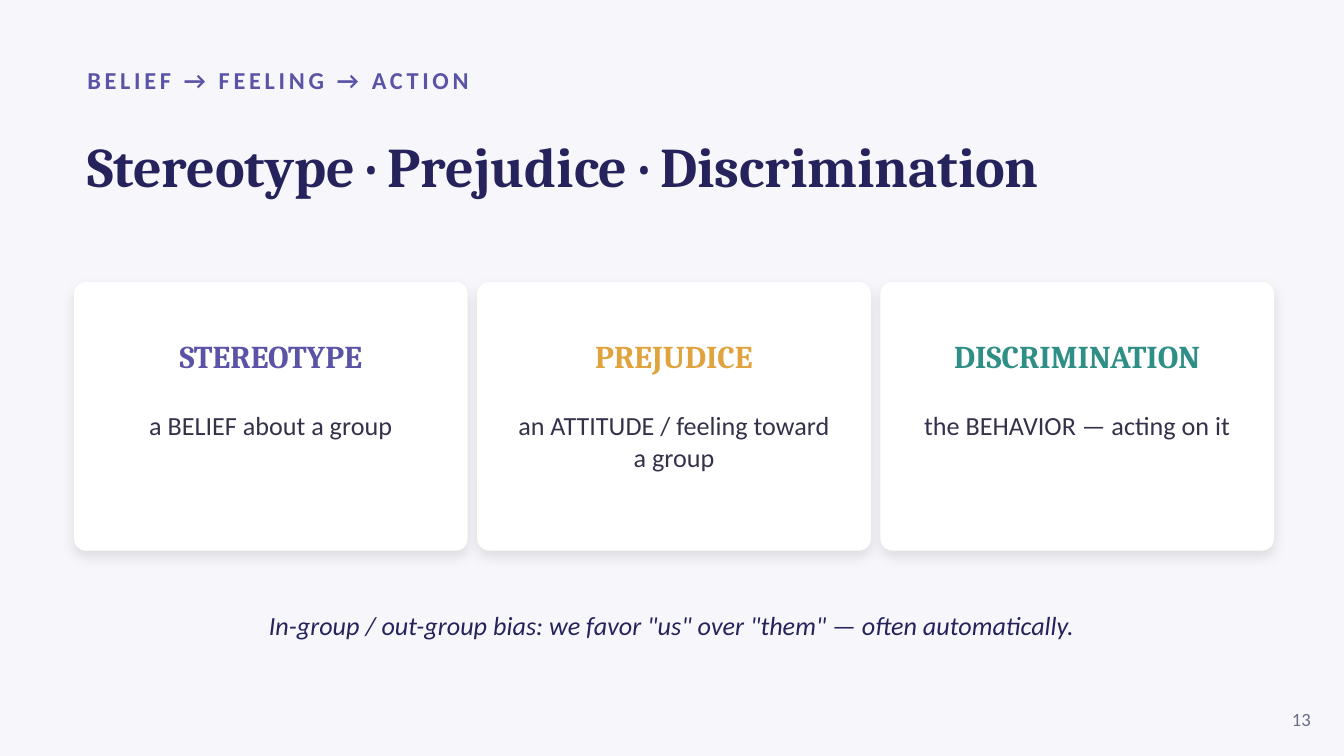
import pptx
import pptx.dml.color
import pptx.enum.shapes
import pptx.enum.text
import pptx.oxml
import pptx.oxml.ns
import pptx.util

Cm = pptx.util.Cm
RGBColor = pptx.dml.color.RGBColor
ALIGN = pptx.enum.text.PP_ALIGN
ANCHOR = pptx.enum.text.MSO_ANCHOR

BACKGROUND = RGBColor(0xF7, 0xF7, 0xFB)
WHITE = RGBColor(0xFF, 0xFF, 0xFF)
NAVY = RGBColor(0x26, 0x23, 0x5C)
INK = RGBColor(0x33, 0x32, 0x4A)
GREY = RGBColor(0x6B, 0x6A, 0x86)
PURPLE = RGBColor(0x5B, 0x53, 0xA6)
AMBER = RGBColor(0xE0, 0xA3, 0x3E)
TEAL = RGBColor(0x2F, 0x8F, 0x86)

KICKER = "BELIEF → FEELING → ACTION"
TITLE = "Stereotype · Prejudice · Discrimination"
CARDS = [
    ("STEREOTYPE", "a BELIEF about a group", PURPLE),
    ("PREJUDICE", "an ATTITUDE / feeling toward a group", AMBER),
    ("DISCRIMINATION", "the BEHAVIOR — acting on it", TEAL),
]
TAKEAWAY = 'In-group / out-group bias: we favor "us" over "them" — often automatically.'
PAGE_NUMBER = "13"

KICKER_FONT = {"name": "Calibri", "size": 13, "bold": True}
TITLE_FONT = {"name": "Cambria", "size": 30, "bold": True}
TERM_FONT = {"name": "Cambria", "size": 17, "bold": True}
MEANING_FONT = {"name": "Calibri", "size": 14}
TAKEAWAY_FONT = {"name": "Calibri", "size": 14, "italic": True}
PAGE_FONT = {"name": "Calibri", "size": 10}

# Lengths in centimetres
MARGIN = 1.4
CONTENT_WIDTH = 22.6
CARD_TOP, CARD_WIDTH, CARD_HEIGHT = 5.33, 7.44, 5.08
CARD_STEP = 7.62
CARD_PADDING = 0.5

SHADOW = (
    '<a:outerShdw xmlns:a="http://schemas.openxmlformats.org/drawingml/2006/main" '
    'blurRad="88900" dist="38100" dir="5400000" algn="bl" rotWithShape="0">'
    '<a:srgbClr val="000000"><a:alpha val="10000"/></a:srgbClr></a:outerShdw>'
)


def add_text(slide, text, box, font_values, color, align=ALIGN.LEFT, anchor=ANCHOR.MIDDLE):
    frame = slide.shapes.add_textbox(*map(Cm, box)).text_frame
    frame.word_wrap = True
    frame.vertical_anchor = anchor
    paragraph = frame.paragraphs[0]
    paragraph.alignment = align
    run = paragraph.add_run()
    run.text = text
    for attribute, value in font_values.items():
        setattr(run.font, attribute, pptx.util.Pt(value) if attribute == "size" else value)
    run.font.color.rgb = color
    return run


def add_card(slide, left, term, meaning, color):
    card = slide.shapes.add_shape(
        pptx.enum.shapes.MSO_SHAPE.ROUNDED_RECTANGLE,
        *map(Cm, (left, CARD_TOP, CARD_WIDTH, CARD_HEIGHT)))
    card.adjustments[0] = 0.045
    card.fill.solid()
    card.fill.fore_color.rgb = WHITE
    card.line.fill.background()
    card.shadow.inherit = False
    effects = card.element.spPr.find(pptx.oxml.ns.qn("a:effectLst"))
    effects.append(pptx.oxml.parse_xml(SHADOW))

    add_text(slide, term, (left, 6.1, CARD_WIDTH, 1.27), TERM_FONT, color, ALIGN.CENTER)
    add_text(slide, meaning,
             (left + CARD_PADDING, 7.62, CARD_WIDTH - 2 * CARD_PADDING, 2.41),
             MEANING_FONT, INK, ALIGN.CENTER, ANCHOR.TOP)


def main():
    deck = pptx.Presentation()
    deck.slide_width, deck.slide_height = Cm(25.4), Cm(14.29)
    slide = deck.slides.add_slide(deck.slide_layouts[6])
    slide.background.fill.solid()
    slide.background.fill.fore_color.rgb = BACKGROUND

    kicker = add_text(slide, KICKER, (MARGIN, 1.07, 22.86, 0.89), KICKER_FONT, PURPLE)
    kicker.font._element.set("spc", "200")
    add_text(slide, TITLE, (MARGIN, 1.98, CONTENT_WIDTH, 2.29), TITLE_FONT, NAVY)
    for index, card in enumerate(CARDS):
        add_card(slide, MARGIN + index * CARD_STEP, *card)
    add_text(slide, TAKEAWAY, (MARGIN, 11.3, CONTENT_WIDTH, 1.02),
             TAKEAWAY_FONT, NAVY, ALIGN.CENTER)
    add_text(slide, PAGE_NUMBER, (23.75, 13.21, 1.27, 0.76), PAGE_FONT, GREY, ALIGN.RIGHT)

    deck.save("out.pptx")


if __name__ == "__main__":
    main()
